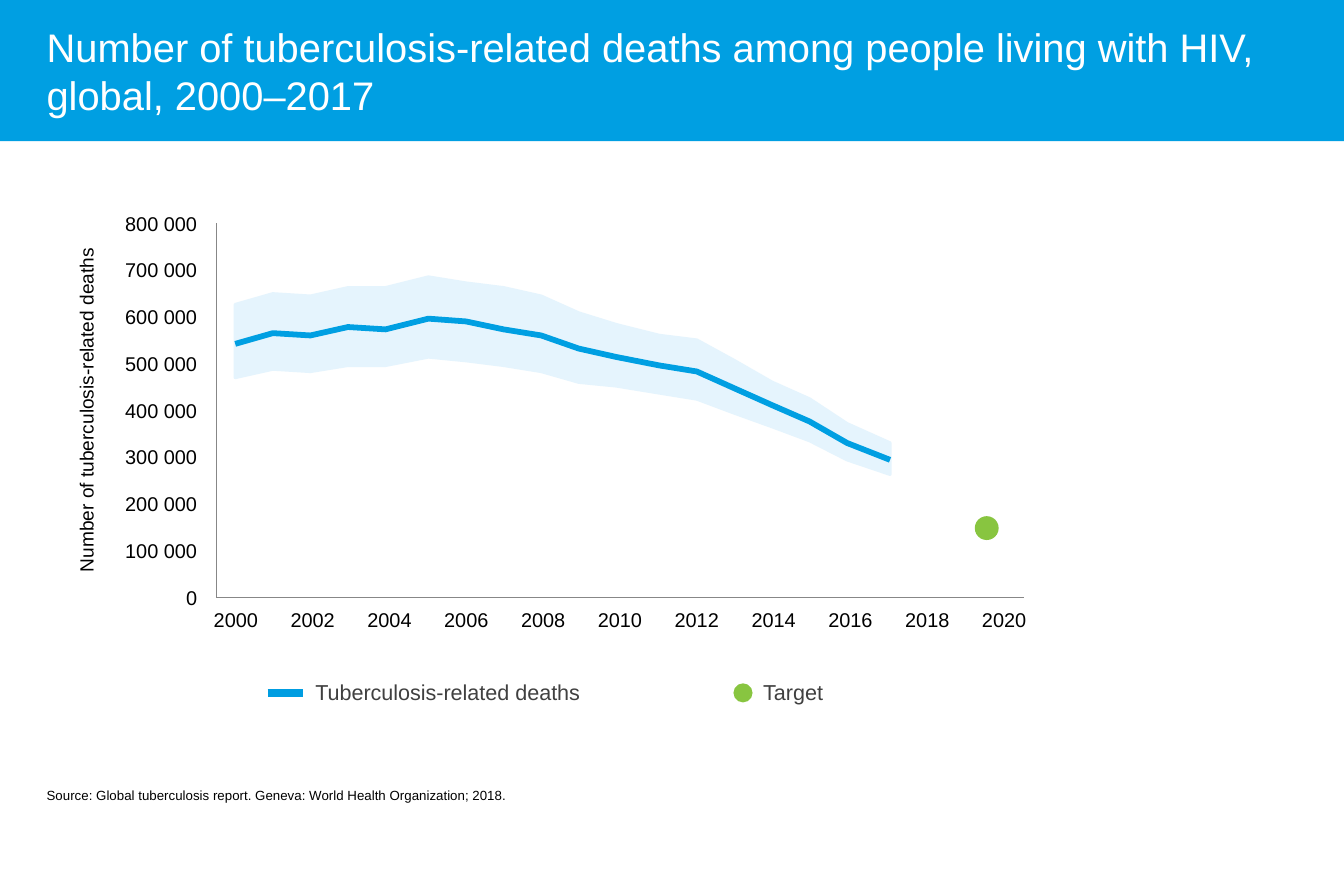
from pptx import Presentation
from pptx import util as u
from pptx.dml.color import RGBColor
from pptx.enum import shapes, text
from pptx.oxml import parse_xml
from pptx.oxml.ns import nsdecls

Pt = u.Pt
COLOURS = {
    "header": "009FE2", "deaths": "009FE2", "legend line": "009DE1",
    "band": "E5F4FD", "target": "88C540", "axis": "878787",
    "legend text": "404040", "black": "000000", "white": "FFFFFF",
}
FONT = "Arial"

# Chart frame, in points; deaths are in thousands
AXIS_LEFT, AXIS_RIGHT = 130.3, 617
AXIS_TOP, AXIS_BOTTOM = 134.6, 360
MAX_DEATHS = 800
FIRST_YEAR_X, LABEL_GAP = 142.2, 46.3

DEATHS = [542, 565, 560, 578, 573, 596, 590, 573, 560,
          532, 514, 496, 483, 447, 411, 376, 330, 294]
UPPER = [626, 649, 644, 662, 662, 685, 672, 662, 644,
         608, 583, 560, 550, 506, 460, 424, 371, 330]
LOWER = [470, 488, 483, 496, 496, 514, 506, 496, 483,
         460, 452, 437, 424, 394, 365, 335, 294, 263]
TARGET_DEATHS, TARGET_X = 148, 594.7


def colour(name):
    return RGBColor.from_string(COLOURS[name])


def y_of(deaths):
    return AXIS_BOTTOM - deaths / MAX_DEATHS * (AXIS_BOTTOM - AXIS_TOP)


def curve_points(values):
    """Place yearly values; every sixth interval is slightly wider."""
    return [(141.8 + 22.65 * index + 3.2 * ((index + 1) // 6), y_of(value))
            for index, value in enumerate(values)]


def paint(shape, fill=None, line=None, width=0):
    shape.shadow.inherit = False
    if fill:
        shape.fill.solid()
        shape.fill.fore_color.rgb = colour(fill)
    else:
        shape.fill.background()
    if line:
        shape.line.color.rgb = colour(line)
        shape.line.width = Pt(width)
    else:
        shape.line.fill.background()


def write(shape, words, size, ink="black", align="LEFT", anchor="TOP", left_inset=0):
    frame = shape.text_frame
    layout = {
        "word_wrap": True,
        "vertical_anchor": getattr(text.MSO_ANCHOR, anchor),
        "margin_left": Pt(left_inset),
        "margin_right": 0, "margin_top": 0, "margin_bottom": 0,
    }
    for name, value in layout.items():
        setattr(frame, name, value)
    paragraph = frame.paragraphs[0]
    paragraph.alignment = getattr(text.PP_ALIGN, align)
    run = paragraph.add_run()
    run.text = words
    for name, value in {"name": FONT, "size": Pt(size)}.items():
        setattr(run.font, name, value)
    run.font.color.rgb = colour(ink)


def add_label(slide, box, words, size, **style):
    label = slide.shapes.add_textbox(*map(Pt, box))
    write(label, words, size, **style)
    return label


def add_line(slide, start, end, ink, width):
    line = slide.shapes.add_connector(
        shapes.MSO_CONNECTOR.STRAIGHT, *map(Pt, start + end))
    line.line.color.rgb = colour(ink)
    line.line.width = Pt(width)
    line._element.spPr.append(parse_xml(f"<a:effectLst {nsdecls('a')}/>"))


def add_dot(slide, x, y, diameter):
    dot = slide.shapes.add_shape(
        shapes.MSO_SHAPE.OVAL, Pt(x - diameter / 2), Pt(y - diameter / 2),
        Pt(diameter), Pt(diameter))
    paint(dot, fill="target")


def add_outline(slide, points, close, **style):
    points = [(Pt(x), Pt(y)) for x, y in points]
    builder = slide.shapes.build_freeform(*points[0])
    builder.add_line_segments(points[1:], close=close)
    paint(builder.convert_to_shape(), **style)


def add_header(slide, width):
    header = slide.shapes.add_shape(
        shapes.MSO_SHAPE.RECTANGLE, 0, 0, width, Pt(85))
    paint(header, fill="header")
    write(header, "Number of tuberculosis-related deaths among people living "
          "with HIV, global, 2000–2017", 24, ink="white", anchor="MIDDLE",
          left_inset=28.1)


def add_axes(slide):
    origin = (AXIS_LEFT, AXIS_BOTTOM)
    for end in ((AXIS_LEFT, AXIS_TOP), (AXIS_RIGHT, AXIS_BOTTOM)):
        add_line(slide, origin, end, "axis", 0.3)
    for deaths in range(0, MAX_DEATHS + 1, 100):
        words = f"{deaths} 000" if deaths else "0"
        add_label(slide, (72.8, y_of(deaths) - 7.2, 46, 14.4), words, 12,
                  align="RIGHT")
    for index, year in enumerate(range(2000, 2021, 2)):
        centre = FIRST_YEAR_X + LABEL_GAP * index
        add_label(slide, (centre - 15, 366.5, 30, 14.4), str(year), 12,
                  align="CENTER", anchor="MIDDLE")
    title = add_label(slide, (45, 140, 16, 204.9),
                      "Number of tuberculosis-related deaths", 11.5)
    title.text_frame._txBody.bodyPr.set("vert", "vert270")


def add_curves(slide):
    band = curve_points(UPPER) + curve_points(LOWER)[::-1]
    add_outline(slide, band, True, fill="band", line="band", width=2)
    add_outline(slide, curve_points(DEATHS), False, line="deaths", width=3.5)
    add_dot(slide, TARGET_X, y_of(TARGET_DEATHS), 14.4)


def add_legend(slide):
    middle = 417.6
    add_line(slide, (161.3, middle), (182.9, middle), "legend line", 5)
    add_dot(slide, 447.8, middle, 11.5)
    for left, width, words in ((190, 170, "Tuberculosis-related deaths"),
                               (460, 44, "Target")):
        add_label(slide, (left, 409, width, 16), words, 13, ink="legend text")


def main():
    presentation = Presentation()
    presentation.slide_width, presentation.slide_height = Pt(810), Pt(540)
    slide = presentation.slides.add_slide(presentation.slide_layouts[6])
    add_header(slide, presentation.slide_width)
    add_axes(slide)
    add_curves(slide)
    add_legend(slide)
    add_label(slide, (28.1, 474.6, 290, 9.6),
              "Source: Global tuberculosis report. Geneva: World Health "
              "Organization; 2018.", 8)
    presentation.save("out.pptx")


if __name__ == "__main__":
    main()
